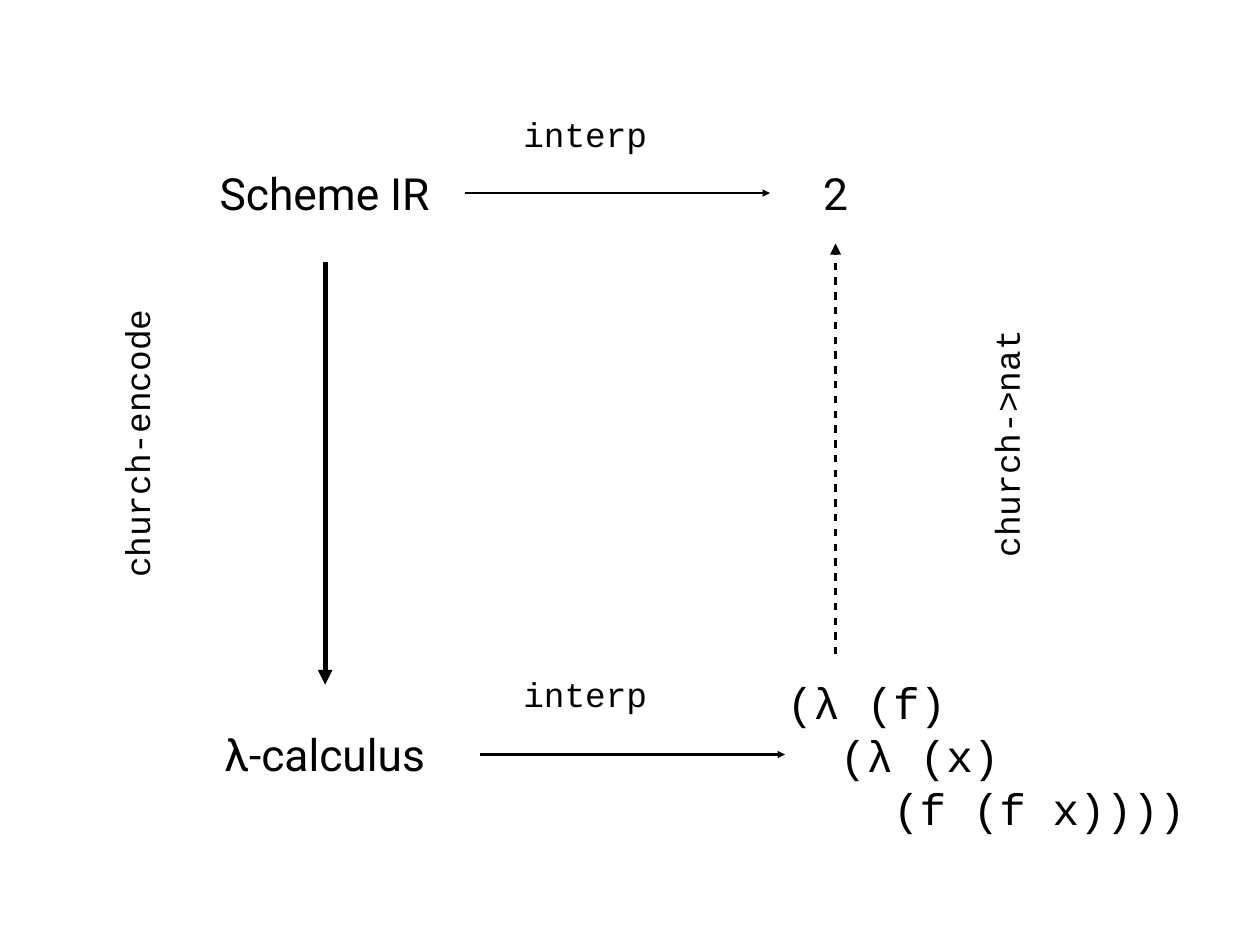
from lxml import etree
from pptx import Presentation, util as u
from pptx.dml.color import RGBColor
from pptx.enum import shapes, text
from pptx.oxml.ns import qn

SCALE = 9144  # EMU per px, 100 px to the inch
THEME = {
    "ink": RGBColor(0, 0, 0),
    "node": ("Roboto", 36),
    "code": ("Courier New", 36),
    "label": ("Courier New", 28),
}


def px(n):
    return u.Emu(n * SCALE)


def write(box, lines, style, turn=0, align=text.PP_ALIGN.CENTER, step=0):
    """Add a text box; each line is indented one step more than the last."""
    shape = slide.shapes.add_textbox(*map(px, box))
    shape.rotation = turn
    frame = shape.text_frame
    frame.word_wrap = False
    frame.vertical_anchor = text.MSO_ANCHOR.MIDDLE
    frame.margin_left = frame.margin_right = px(6)
    frame.margin_top = frame.margin_bottom = px(6)
    for i, line in enumerate(lines):
        para = frame.add_paragraph() if i else frame.paragraphs[0]
        para.alignment = align
        if step:
            props = para._p.get_or_add_pPr()
            props.set("marL", str(px(i * step)))
            props.set("indent", "0")
        run = para.add_run()
        run.text = line
        run.font.name, size = THEME[style]
        run.font.size = u.Pt(size)
        run.font.color.rgb = THEME["ink"]


deck = Presentation()
deck.slide_width, deck.slide_height = px(1422), px(1067)
slide = deck.slides.add_slide(deck.slide_layouts[6])

# Corners of the square
write((238, 182, 257, 71), ["Scheme IR"], "node")
write((247, 816, 239, 71), ["λ-calculus"], "node")
write((923, 182, 40, 71), ["2"], "node")
write((882, 761, 463, 182), ["(λ (f)", "(λ (x)", "(f (f x))))"], "code",
      align=text.PP_ALIGN.LEFT, step=60)

# Names of the steps
for top in (124, 756):
    write((584, top, 153, 54), ["interp"], "label")
for left, wide, name in ((-4, 316, "church-encode"), (1001, 269, "church->nat")):
    write((left, 474, wide, 54), [name], "label", turn=270)

# Arrows: start, end, weight, dashed
arrows = [
    ((525, 218), (869, 218), 2, False),
    ((542, 852), (886, 852), 2, False),
    ((367, 296), (367, 773), 4, False),
    ((943, 739), (943, 275), 3, True),
]
for start, end, weight, dashed in arrows:
    arrow = slide.shapes.add_connector(
        shapes.MSO_CONNECTOR.STRAIGHT, *map(px, start + end))
    arrow.line.color.rgb = THEME["ink"]
    arrow.line.width = u.Pt(weight)
    stroke = arrow.line._get_or_add_ln()
    if dashed:
        dash = etree.SubElement(stroke, qn("a:custDash"))
        etree.SubElement(dash, qn("a:ds"), d="200000", sp="200000")
    etree.SubElement(stroke, qn("a:tailEnd"), type="triangle")
    etree.SubElement(arrow._element.spPr, qn("a:effectLst"))

deck.save("out.pptx")
